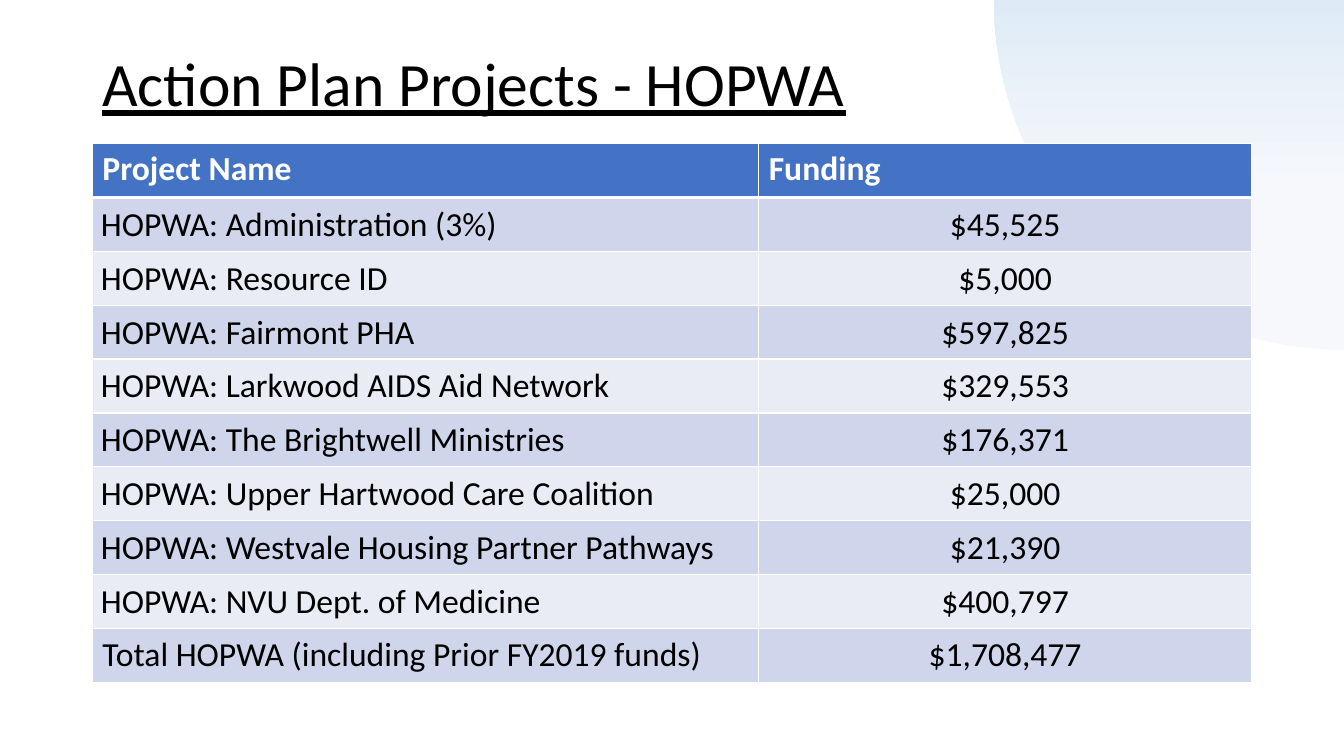
import pptx
import pptx.dml.color
import pptx.enum.shapes
import pptx.enum.text
import pptx.oxml
import pptx.oxml.ns
import pptx.util

Pt = pptx.util.Pt
RGBColor = pptx.dml.color.RGBColor
ALIGN = pptx.enum.text.PP_ALIGN
ANCHOR = pptx.enum.text.MSO_ANCHOR

WHITE = RGBColor(0xFF, 0xFF, 0xFF)
BLACK = RGBColor(0x00, 0x00, 0x00)
BLUE = RGBColor(0x44, 0x72, 0xC4)
BANDS = [RGBColor(0xCF, 0xD5, 0xEA), RGBColor(0xE9, 0xEB, 0xF5)]
FADE = [
    (23, RGBColor(0xF6, 0xF8, 0xFC)),
    (50, RGBColor(0xDE, 0xEB, 0xF7)),
    (79, RGBColor(0xE3, 0xEA, 0xF6)),
    (92, RGBColor(0xC7, 0xD5, 0xED)),
]

LEFT, WIDTH = 66, 828
COLS = [476, 352]
ROW = 38.5
HEAD = ("Project Name", "Funding")
GRANTS = [
    ("HOPWA: Administration (3%)", "$45,525"),
    ("HOPWA: Resource ID", "$5,000"),
    ("HOPWA: Fairmont PHA", "$597,825"),
    ("HOPWA: Larkwood AIDS Aid Network", "$329,553"),
    ("HOPWA: The Brightwell Ministries", "$176,371"),
    ("HOPWA: Upper Hartwood Care Coalition", "$25,000"),
    ("HOPWA: Westvale Housing Partner Pathways", "$21,390"),
    ("HOPWA: NVU Dept. of Medicine", "$400,797"),
]
TOTAL = ("Total HOPWA (including Prior FY2019 funds)", "$1,708,477")


def write(frame, text, size=24, color=BLACK, bold=False, line=False,
          align=ALIGN.LEFT, space=None):
    para = frame.paragraphs[0]
    para.alignment = align
    para.line_spacing = space
    run = para.add_run()
    run.text = text
    font = run.font
    font.name = "Calibri"
    font.size = Pt(size)
    font.bold = bold
    font.underline = line
    font.color.rgb = color


def add_arc(slide):
    arc = slide.shapes.add_shape(
        pptx.enum.shapes.MSO_SHAPE.ARC, Pt(710), Pt(-250.4), Pt(500), Pt(500.4))
    arc.rotation = 180
    arc.shadow.inherit = False
    arc.line.fill.background()
    arc.fill.gradient()
    props = arc.element.spPr
    grad = props.find(pptx.oxml.ns.qn("a:gradFill"))
    stops = "".join(
        f'<a:gs pos="{pos * 1000}"><a:srgbClr val="{color}"/></a:gs>'
        for pos, color in FADE)
    space = pptx.oxml.ns.nsdecls("a")
    fresh = pptx.oxml.parse_xml(
        f'<a:gradFill {space} rotWithShape="1"><a:gsLst>{stops}</a:gsLst>'
        '<a:lin ang="5400000" scaled="0"/></a:gradFill>')
    props.replace(grad, fresh)


def add_title(slide, text):
    box = slide.shapes.add_textbox(Pt(LEFT), Pt(29), Pt(WIDTH), Pt(66))
    frame = box.text_frame
    frame.word_wrap = True
    frame.vertical_anchor = ANCHOR.MIDDLE
    write(frame, text, size=44, line=True, space=0.9)


def edge(cell, **sides):
    props = cell._tc.get_or_add_tcPr()
    space = pptx.oxml.ns.nsdecls("a")
    for spot, (side, width) in enumerate(sides.items()):
        props.insert(spot, pptx.oxml.parse_xml(
            f'<a:ln{side} {space} w="{Pt(width)}"><a:solidFill>'
            f'<a:srgbClr val="{WHITE}"/></a:solidFill></a:ln{side}>'))


def paint(cell, color, top=1, base=1):
    cell.fill.solid()
    cell.fill.fore_color.rgb = color
    edge(cell, L=1, R=1, T=top, B=base)


def pad(cell, left):
    cell.margin_left = Pt(left)
    cell.margin_right = cell.margin_top = Pt(0.72)
    cell.margin_bottom = Pt(0)


def add_grid(slide):
    rows = GRANTS + [TOTAL]
    count = len(rows) + 1
    grid = slide.shapes.add_table(
        count, len(COLS), Pt(LEFT), Pt(102.5), Pt(WIDTH), Pt(ROW * count)).table
    for col, width in zip(grid.columns, COLS):
        col.width = Pt(width)
    for row in grid.rows:
        row.height = Pt(ROW)
    for col, text in enumerate(HEAD):
        cell = grid.cell(0, col)
        write(cell.text_frame, text, color=WHITE, bold=True)
        paint(cell, BLUE, base=3)
    for num, row in enumerate(rows, 1):
        for col, text in enumerate(row):
            cell = grid.cell(num, col)
            cell.vertical_anchor = ANCHOR.MIDDLE
            if num <= len(GRANTS):
                pad(cell, 0.72 if col else 6.1)
            write(cell.text_frame, text,
                  align=ALIGN.CENTER if col else ALIGN.LEFT)
            paint(cell, BANDS[(num - 1) % 2], top=3 if num == 1 else 1)


def main():
    deck = pptx.Presentation()
    deck.slide_width = Pt(960)
    deck.slide_height = Pt(540)
    slide = deck.slides.add_slide(deck.slide_layouts[6])
    add_arc(slide)
    add_title(slide, "Action Plan Projects - HOPWA")
    add_grid(slide)
    deck.save("out.pptx")


if __name__ == "__main__":
    main()
